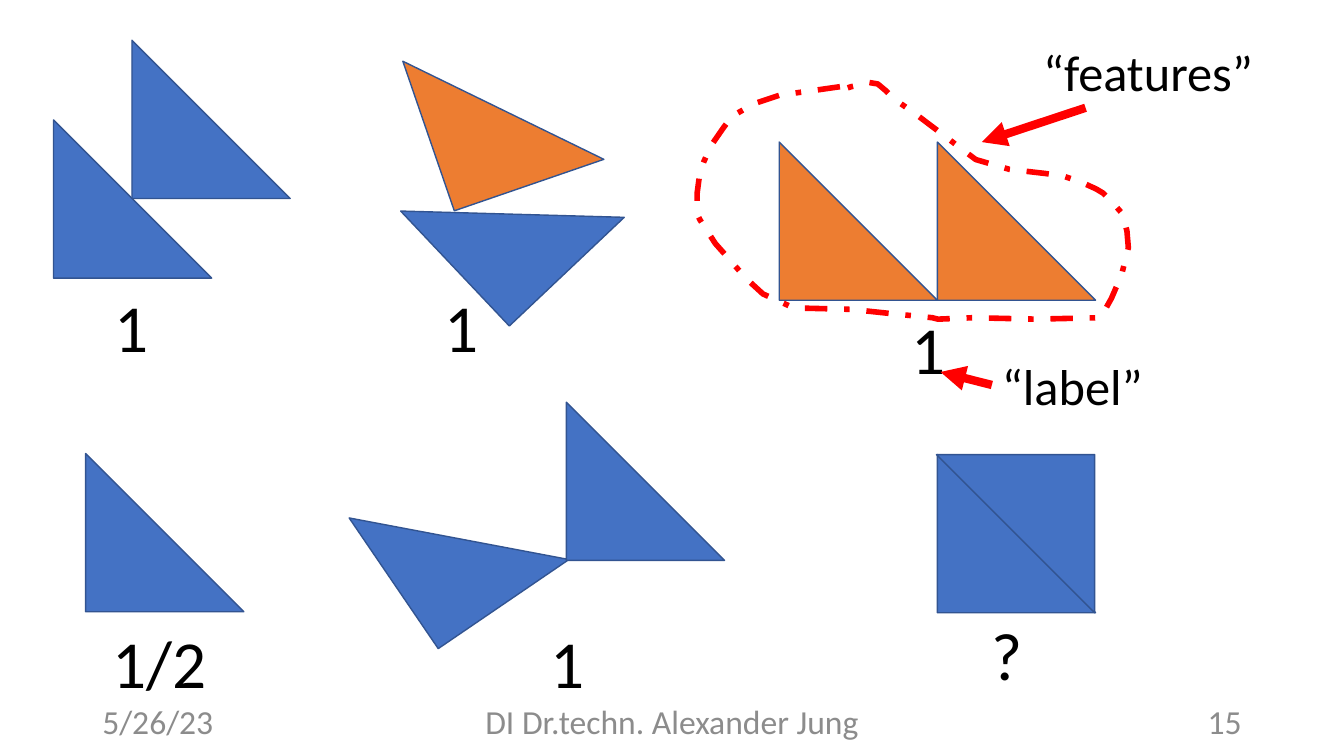
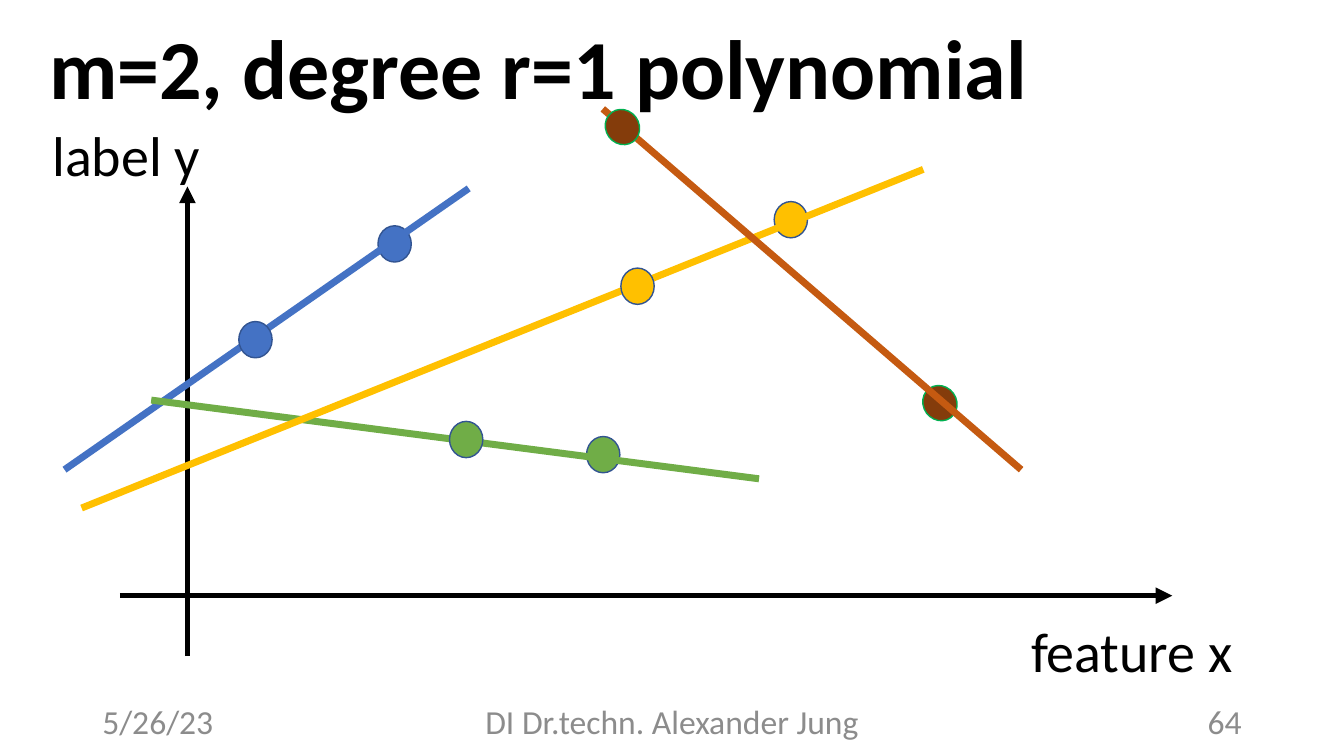
"""Build two machine learning slides: labelled triangle puzzles and lines fitted through two points."""
import pptx
import pptx.dml.color
import pptx.enum.dml
import pptx.enum.shapes
import pptx.enum.text
import pptx.oxml.ns
import pptx.util
import lxml.etree

Pt = pptx.util.Pt
SHAPE = pptx.enum.shapes.MSO_SHAPE
ALIGN = pptx.enum.text.PP_ALIGN
ANCHOR = pptx.enum.text.MSO_ANCHOR
AUTO = pptx.enum.text.MSO_AUTO_SIZE

FONT = "Calibri"
BLACK, GREY, RED = "000000", "8C8C8C", "FF0000"
BLUE, ORANGE, YELLOW, GREEN = "4472C4", "ED7D31", "FFC000", "70AD47"
OUTLINE, BROWN, RUST, BRIGHT_GREEN = "325491", "843C0B", "C55A11", "00B050"

FOOTER_TOP, FOOTER_HEIGHT = 500.4, 28.8
DATE = ("5/26/23", 66, 216, ALIGN.LEFT)
AUTHOR = ("DI Dr.techn. Alexander Jung", 318, 324, ALIGN.CENTER)
NUMBER_LEFT, NUMBER_WIDTH = 678, 216

SIDE = 113
TRIANGLES = [
    (38.2, 85.7, 0, BLUE),
    (94.3, 28.8, 0, BLUE),
    (309.6, 96.5, 316.6, BLUE),
    (303.1, 22.3, 341, ORANGE),
    (556.6, 101.5, 0, ORANGE),
    (669.6, 101.5, 0, ORANGE),
    (61.2, 324, 0, BLUE),
    (271.4, 328.3, 325.7, BLUE),
    (404.6, 287.3, 0, BLUE),
    (669.6, 324.7, 0, BLUE),
    (668.9, 324.7, 180, BLUE),
]
COUNTS = [
    ("1", 74.9, 200.2, 38.9),
    ("1", 310.3, 200.2, 38.9),
    ("1", 643.7, 216, 38.9),
    ("1/2", 73.4, 440.6, 82.8),
    ("1", 385.9, 440.6, 38.9),
    ("?", 701.3, 434.9, 36.7),
]
FEATURE_OUTLINE = [
    (600, 62), (579, 65), (557, 68), (539, 74), (523, 83), (517, 91),
    (508, 104), (503, 115), (500, 123), (498, 138), (498, 153), (500, 157),
    (511, 174), (519, 183), (533, 199), (545, 210), (556, 215), (567, 220),
    (608, 221), (636, 224), (666, 227), (670, 228), (695, 227), (740, 228),
    (785, 227), (789, 222), (794, 213), (797, 206), (801, 197), (804, 185),
    (806, 177), (805, 165), (802, 153), (795, 145), (788, 138), (783, 135),
    (772, 130), (760, 126), (747, 124), (721, 121), (697, 114), (685, 105),
    (672, 95), (652, 80), (639, 71), (633, 65), (627, 60), (621, 59),
    (608, 62), (605, 63),
]

DOT_WIDTH, DOT_HEIGHT = 23.8, 25.9
AXES = [((85.7, 425.5), (837.4, 425.5)), ((133.9, 468.7), (133.9, 133.2))]
FITS = [
    {"line": BLUE, "ends": ((46.1, 335.5), (334.8, 134.6)), "dot": (BLUE, OUTLINE, 0),
     "behind": (270, 161.3), "front": (170.6, 229.7)},
    {"line": GREEN, "ends": ((108, 285.8), (542.2, 342)), "dot": (GREEN, OUTLINE, 0),
     "behind": (419, 311.8), "front": (321.1, 301)},
    {"line": YELLOW, "ends": ((659.5, 121), (58.3, 362.9)), "dot": (YELLOW, OUTLINE, 0),
     "behind": (553, 144), "front": (443.5, 191.5)},
    {"line": RUST, "ends": ((729.4, 335.5), (430.6, 77.8)), "dot": (BROWN, BRIGHT_GREEN, 323.7),
     "behind": (659.5, 275), "front": (432.7, 77.8)},
]
AXIS_NAMES = [("feature x", 729.4, 437, 169.2), ("label y", 30.2, 82.8, 130.3)]


def colour(value):
    return pptx.dml.color.RGBColor.from_string(value)


def set_line(line, value, width):
    line.color.rgb = colour(value)
    line.width = Pt(width)


def add_text(page, text, left, top, width, height, size, hue=BLACK, bold=False,
             align=ALIGN.LEFT, anchor=ANCHOR.TOP, wrap=True):
    box = page.shapes.add_textbox(Pt(left), Pt(top), Pt(width), Pt(height))
    frame = box.text_frame
    frame.word_wrap = wrap
    frame.auto_size = AUTO.NONE if wrap else AUTO.SHAPE_TO_FIT_TEXT
    frame.vertical_anchor = anchor
    para = frame.paragraphs[0]
    para.alignment = align
    span = para.add_run()
    span.text = text
    span.font.name = FONT
    span.font.size = Pt(size)
    span.font.bold = bold
    span.font.color.rgb = colour(hue)
    return box


def add_label(page, text, left, top, width, size):
    return add_text(page, text, left, top, width, size * 1.2 + 7.2, size, wrap=False)


def add_figure(page, kind, left, top, width, height, fill, outline=OUTLINE, turn=0):
    figure = page.shapes.add_shape(kind, Pt(left), Pt(top), Pt(width), Pt(height))
    figure.shadow.inherit = False
    figure.rotation = turn
    figure.fill.solid()
    figure.fill.fore_color.rgb = colour(fill)
    set_line(figure.line, outline, 1)


def add_line(page, start, end, hue, width, arrow=False):
    points = [Pt(value) for value in (*start, *end)]
    line = page.shapes.add_connector(pptx.enum.shapes.MSO_CONNECTOR.STRAIGHT, *points)
    set_line(line.line, hue, width)
    qn = pptx.oxml.ns.qn
    properties = line._element.spPr
    if arrow:
        lxml.etree.SubElement(properties.find(qn("a:ln")), qn("a:tailEnd"), type="triangle")
    lxml.etree.SubElement(properties, qn("a:effectLst"))
    return line


def add_page(deck, number):
    page = deck.slides.add_slide(deck.slide_layouts[6])
    footers = [DATE, AUTHOR, (number, NUMBER_LEFT, NUMBER_WIDTH, ALIGN.RIGHT)]
    for text, left, width, align in footers:
        add_text(page, text, left, FOOTER_TOP, width, FOOTER_HEIGHT, 24, GREY,
                 align=align, anchor=ANCHOR.MIDDLE)
    return page


def build_puzzles(deck):
    page = add_page(deck, "15")
    for left, top, turn, fill in TRIANGLES:
        add_figure(page, SHAPE.RIGHT_TRIANGLE, left, top, SIDE, SIDE, fill, turn=turn)
    for text, left, top, width in COUNTS:
        add_label(page, text, left, top, width, 48)

    builder = page.shapes.build_freeform(*FEATURE_OUTLINE[0], scale=Pt(1))
    builder.add_line_segments(FEATURE_OUTLINE[1:], close=False)
    loop = builder.convert_to_shape()
    loop.shadow.inherit = False
    loop.fill.background()
    set_line(loop.line, RED, 4)
    loop.line.dash_style = pptx.enum.dml.MSO_LINE.DASH_DOT

    add_label(page, "“features”", 738, 25.9, 166.3, 36)
    add_line(page, (775.4, 77), (701.3, 101.5), RED, 6, arrow=True)
    label = add_label(page, "“label”", 708.5, 249.8, 115.9, 36)
    pointer = add_line(page, (708.5, 275), (671.8, 265.7), RED, 6, arrow=True)
    pointer.begin_connect(label, 1)


def add_dots(page, layer):
    for fit in FITS:
        fill, outline, turn = fit["dot"]
        add_figure(page, SHAPE.OVAL, *fit[layer], DOT_WIDTH, DOT_HEIGHT, fill, outline, turn)


def build_fits(deck):
    page = add_page(deck, "64")
    for start, end in AXES:
        add_line(page, start, end, BLACK, 4, arrow=True)
    add_dots(page, "behind")
    for fit in FITS:
        add_line(page, *fit["ends"], fit["line"], 5)
    title = add_text(page, "m=2, degree r=1 polynomial", 28.1, -1.4, 971.3, 105.8, 60,
                     bold=True, anchor=ANCHOR.MIDDLE)
    title.text_frame.paragraphs[0].line_spacing = 0.9
    add_dots(page, "front")
    for text, left, top, width in AXIS_NAMES:
        add_label(page, text, left, top, width, 40)


def main():
    deck = pptx.Presentation()
    deck.slide_width, deck.slide_height = Pt(960), Pt(540)
    build_puzzles(deck)
    build_fits(deck)
    deck.save("out.pptx")


if __name__ == "__main__":
    main()
